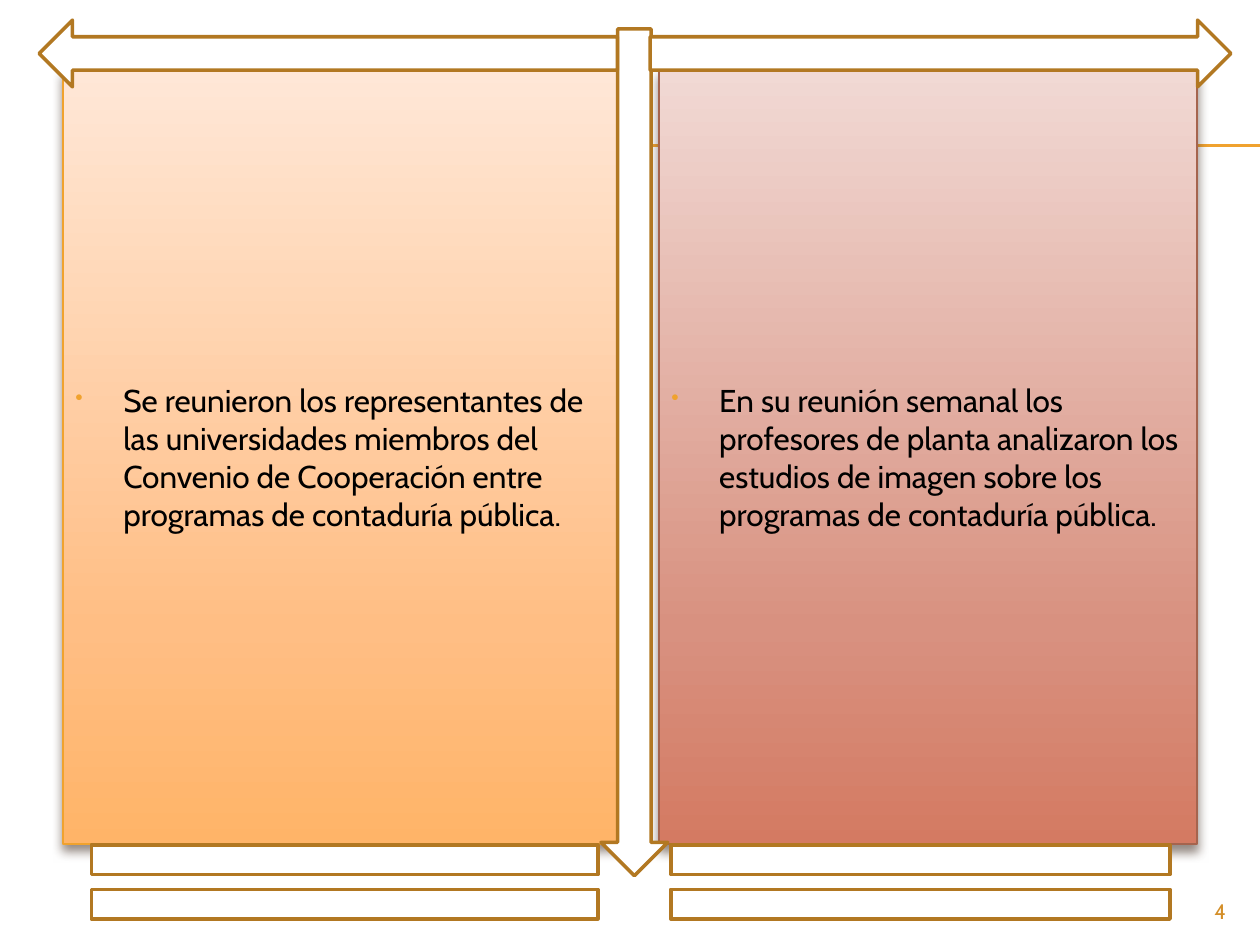
from lxml.etree import SubElement
from pptx import Presentation
from pptx.dml.color import RGBColor
from pptx.enum.shapes import MSO_CONNECTOR, MSO_SHAPE
from pptx.enum.text import MSO_ANCHOR, PP_ALIGN
from pptx.oxml.ns import qn
from pptx.util import Inches, Pt

GOLD = "F0A22E"
BROWN = "B27822"


def rgb(hex_color):
    return RGBColor.from_string(hex_color)


def add_color(parent, color, alpha=None):
    clr = SubElement(parent, qn("a:srgbClr"), val=color)
    if alpha is not None:
        SubElement(clr, qn("a:alpha"), val=str(alpha * 1000))


def style_line(line, color, width):
    line.color.rgb = rgb(color)
    line.width = Pt(width)


def style_run(p, size, color):
    font = p.runs[0].font
    font.name = "Cabin"
    font.size = Pt(size)
    font.color.rgb = rgb(color)


def set_gradient(sp, stops):
    sp.fill.gradient()
    sp.fill.gradient_angle = 270
    gs_list = sp._element.spPr.find(qn("a:gradFill")).find(qn("a:gsLst"))
    for gs in list(gs_list):
        gs_list.remove(gs)
    for pos, color in stops:
        add_color(SubElement(gs_list, qn("a:gs"), pos=str(pos * 1000)), color)


def set_shadow(sp):
    sp.shadow.inherit = False
    effects = sp._element.spPr.find(qn("a:effectLst"))
    shadow = SubElement(effects, qn("a:outerShdw"), blurRad=str(Pt(6)),
                        dist=str(Pt(4)), dir="5400000", rotWithShape="0")
    add_color(shadow, "4E3B30", 60)


def set_bullet(p):
    pPr = p._p.get_or_add_pPr()
    pPr.set("marL", str(Inches(0.38)))
    pPr.set("indent", str(Inches(-0.38)))
    add_color(SubElement(pPr, qn("a:buClr")), GOLD)
    SubElement(pPr, qn("a:buSzPct"), val="70000")
    SubElement(pPr, qn("a:buChar"), char="•")


def add_rules(s, x, y, right):
    for top in (y, y + 0.01):
        rule = s.shapes.add_connector(MSO_CONNECTOR.STRAIGHT, Inches(x), Inches(top),
                                      Inches(right), Inches(top))
        style_line(rule.line, GOLD, 0.75)
        SubElement(rule._element.spPr, qn("a:effectLst"))


def add_panel(s, box, stops, border, text):
    sp = s.shapes.add_shape(MSO_SHAPE.RECTANGLE, *map(Inches, box))
    set_gradient(sp, stops)
    style_line(sp.line, border, 0.79)
    set_shadow(sp)
    tf = sp.text_frame
    tf.word_wrap = True
    tf.vertical_anchor = MSO_ANCHOR.MIDDLE
    p = tf.paragraphs[0]
    p.text = text
    p.alignment = PP_ALIGN.LEFT
    p.space_before = Pt(3.6)
    set_bullet(p)
    style_run(p, 18, "000000")


def add_outline_shape(s, kind, box):
    sp = s.shapes.add_shape(kind, *map(Inches, box))
    sp.shadow.inherit = False
    sp.fill.solid()
    sp.fill.fore_color.rgb = rgb("FFFFFF")
    style_line(sp.line, BROWN, 2)


def add_frame(s):
    for kind, box in (
        (MSO_SHAPE.DOWN_ARROW, (4.77, 0.23, 0.53, 6.72)),
        (MSO_SHAPE.RIGHT_ARROW, (5.16, 0.16, 4.61, 0.53)),
        (MSO_SHAPE.LEFT_ARROW, (0.31, 0.16, 4.59, 0.53)),
        (MSO_SHAPE.MATH_EQUAL, (0, 6.5, 5.47, 1)),
        (MSO_SHAPE.MATH_EQUAL, (4.61, 6.5, 5.39, 1)),
    ):
        add_outline_shape(s, kind, box)


def add_page_number(s, box, number):
    tf = s.shapes.add_textbox(*map(Inches, box)).text_frame
    tf.word_wrap = True
    p = tf.paragraphs[0]
    p.text = number
    p.alignment = PP_ALIGN.RIGHT
    style_run(p, 12, "D48F29")


def main():
    prs = Presentation()
    prs.slide_width, prs.slide_height = Inches(10), Inches(7.5)
    s = prs.slides.add_slide(prs.slide_layouts[6])
    add_rules(s, 0.56, 1.15, 10)
    add_panel(s, (0.5, 0.55, 4.42, 6.15),
              ((0, "FFE7D7"), (72, "FFBE84"), (100, "FFB468")), GOLD,
              "Se reunieron los representantes de las universidades miembros del "
              "Convenio de Cooperación entre programas de contaduría pública.")
    add_panel(s, (5.23, 0.55, 4.27, 6.15),
              ((0, "F1D9D4"), (72, "D89180"), (100, "D47A62")), "A5644E",
              "En su reunión semanal los profesores de planta analizaron los "
              "estudios de imagen sobre los programas de contaduría pública.")
    add_frame(s)
    add_page_number(s, (9, 7.08, 0.83, 0.27), "4")
    prs.save("out.pptx")


if __name__ == "__main__":
    main()
